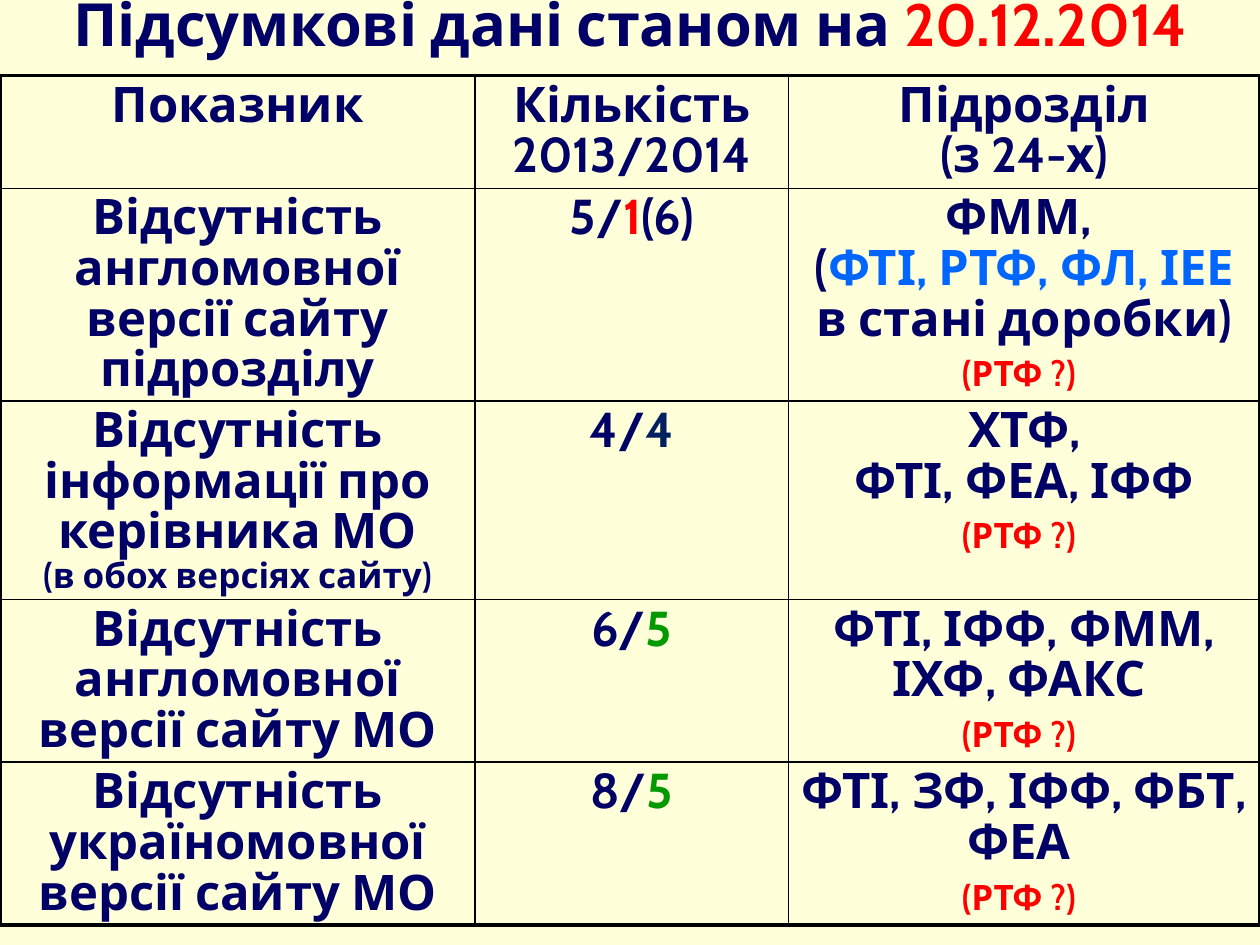
from dataclasses import dataclass

from lxml import etree
from pptx import Presentation
from pptx.dml.color import RGBColor
from pptx.enum import text
from pptx.oxml import ns
from pptx.util import Inches, Pt


@dataclass(frozen=True)
class Theme:
    font: str = "Cabin"
    paper: str = "FFFFD9"
    navy: str = "000066"
    dark: str = "002060"
    red: str = "FF0000"
    blue: str = "0066FF"
    green: str = "009900"
    border: str = "000000"
    title: int = 34
    body: int = 28
    small: int = 20
    inner_line: float = 1
    outer_line: float = 2.25
    spacing: float = 0.85


THEME = Theme()


class SlideBuilder:
    def __init__(self, deck, theme):
        self.theme = theme
        self.page = deck.slides.add_slide(deck.slide_layouts[6])
        fill = self.page.background.fill
        fill.solid()
        fill.fore_color.rgb = RGBColor.from_string(theme.paper)

    def add_text(self, frame, paragraphs, size, spacing=None):
        """Each paragraph is a list of (text, colour, size) spans; None means default."""
        for index, spans in enumerate(paragraphs):
            para = frame.paragraphs[0] if index == 0 else frame.add_paragraph()
            para.alignment = text.PP_ALIGN.CENTER
            if spacing:
                para.line_spacing = spacing
            for words, colour, span_size in spans:
                for number, line in enumerate(words.split("\n")):
                    if number:
                        para.add_line_break()
                    if not line:
                        continue
                    span = para.add_run()
                    span.text = line
                    span.font.name = self.theme.font
                    span.font.size = Pt(span_size or size)
                    span.font.bold = True
                    span.font.color.rgb = RGBColor.from_string(colour or self.theme.navy)

    def text_box(self, left, top, width, height, paragraphs, size):
        box = self.page.shapes.add_textbox(
            Inches(left), Inches(top), Inches(width), Inches(height))
        frame = box.text_frame
        frame.word_wrap = True
        frame.auto_size = text.MSO_AUTO_SIZE.SHAPE_TO_FIT_TEXT
        frame.margin_left = frame.margin_right = Inches(0.02)
        frame.margin_top = frame.margin_bottom = Inches(0.01)
        self.add_text(frame, paragraphs, size)

    def border(self, cell, side, width):
        properties = cell._tc.get_or_add_tcPr()
        line = etree.SubElement(properties, ns.qn(f"a:ln{side}"), w=str(Pt(width)))
        fill = etree.SubElement(line, ns.qn("a:solidFill"))
        etree.SubElement(fill, ns.qn("a:srgbClr"), val=self.theme.border)

    def table(self, left, top, widths, heights, rows):
        frame = self.page.shapes.add_table(
            len(heights), len(widths), Inches(left), Inches(top),
            Inches(sum(widths)), Inches(sum(heights)))
        grid = frame.table
        grid.first_row = grid.horz_banding = False
        for column, width in zip(grid.columns, widths):
            column.width = Inches(width)
        for row, height in zip(grid.rows, heights):
            row.height = Inches(height)

        last_row, last_column = len(heights) - 1, len(widths) - 1
        for r, row in enumerate(rows):
            for c, paragraphs in enumerate(row):
                cell = grid.cell(r, c)
                # Heavy lines around the table, thin lines inside it
                outer = {"L": c == 0, "R": c == last_column,
                         "T": r == 0, "B": r == last_row}
                for side, heavy in outer.items():
                    self.border(cell, side, self.theme.outer_line if heavy
                                else self.theme.inner_line)
                cell.fill.background()
                self.add_text(cell.text_frame, paragraphs, self.theme.body,
                              self.theme.spacing)


def span(words, colour=None, size=None):
    return words, colour, size


def main():
    deck = Presentation()
    deck.slide_width, deck.slide_height = Inches(10), Inches(7.5)
    slide = SlideBuilder(deck, THEME)

    # Title
    slide.text_box(0, -0.11, 10, 0.6, [[
        span("Підсумкові дані станом на "), span("20.12.2014", THEME.red)]], THEME.title)

    # Indicator, count and departments of each row
    query = [span("(РТФ ?)", THEME.red, THEME.small), span(" ")]
    rows = [
        [[[span("Показник")]],
         [[span("Кількість")], [span("2013/2014")]],
         [[span("Підрозділ")], [span("(з 24-х)")]]],
        [[[span("Відсутність англомовної версії сайту підрозділу")]],
         [[span("5/"), span("1", THEME.red), span("(6)")]],
         [[span("ФММ, ")],
          [span("("), span("ФТІ, РТФ, ФЛ, ІЕЕ", THEME.blue),
           span(" в стані доробки) "), *query]]],
        [[[span("Відсутність інформації про керівника МО\n"),
           span("(в обох версіях сайту)", size=THEME.small)]],
         [[span("4/"), span("4", THEME.dark)]],
         [[span("ХТФ,\nФТІ, ФЕА, ІФФ")], query]],
        [[[span("Відсутність англомовної версії сайту МО")]],
         [[span("6/"), span("5", THEME.green)]],
         [[span("ФТІ, ІФФ, ФММ, ІХФ, ФАКС ")], query]],
        [[[span("Відсутність україномовної версії сайту МО")]],
         [[span("8/"), span("5", THEME.green)]],
         [[span("ФТІ, ЗФ, ІФФ, ФБТ, ФЕА ")], query]],
    ]
    slide.table(0, 0.6, [3.77, 2.49, 3.74], [0.89, 1.69, 1.57, 1.29, 1.29], rows)

    deck.save("out.pptx")


if __name__ == "__main__":
    main()
